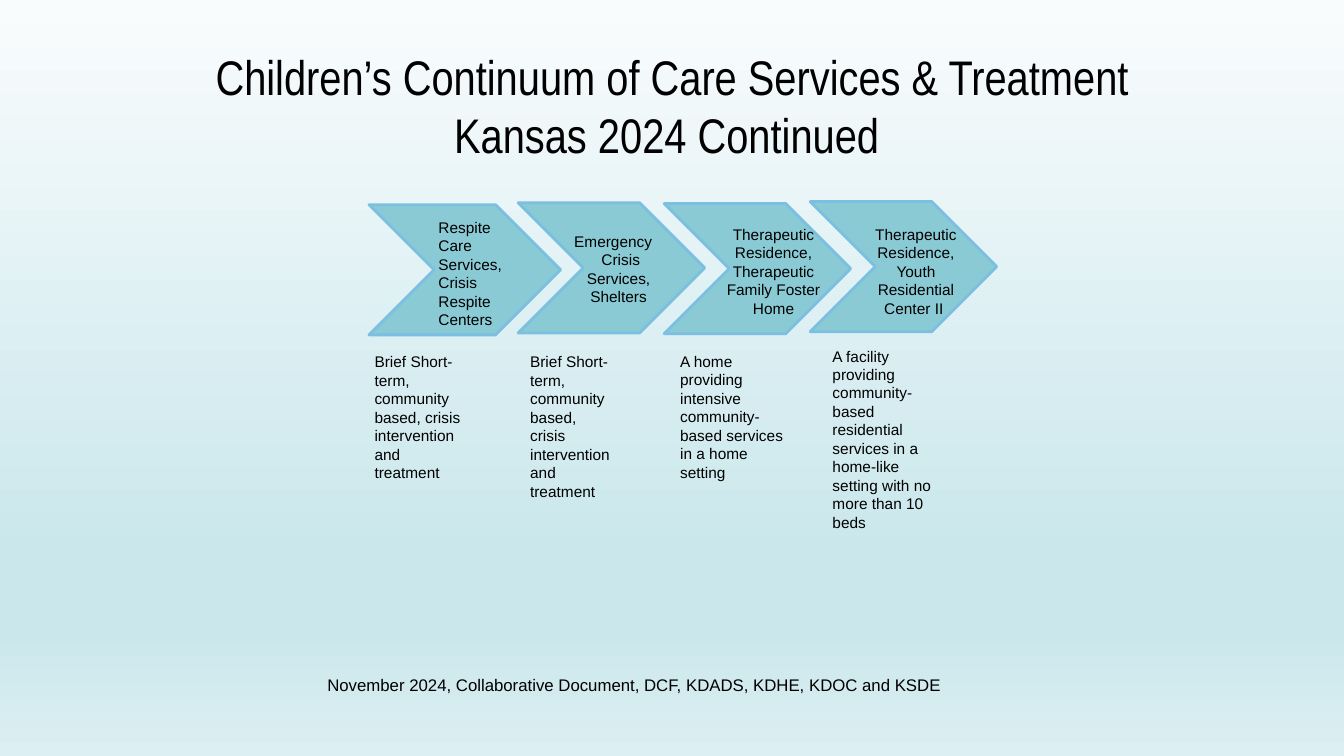
from lxml import etree
from pptx import Presentation
from pptx.dml.color import RGBColor
from pptx.enum.shapes import MSO_SHAPE
from pptx.enum.text import MSO_ANCHOR, MSO_AUTO_SIZE, PP_ALIGN
from pptx.oxml.ns import qn
from pptx.util import Cm, Pt

CHEVRON = MSO_SHAPE.CHEVRON
MIDDLE = MSO_ANCHOR.MIDDLE
NO_FIT, GROW = MSO_AUTO_SIZE.NONE, MSO_AUTO_SIZE.SHAPE_TO_FIT_TEXT
LEFT, CENTER = PP_ALIGN.LEFT, PP_ALIGN.CENTER
TITLE_ONLY = 5

BLACK, TEAL, SKY = "000000", "8ACAD4", "7BBFE1"
BACKGROUND = [(0, "F9FCFD"), (74, "CAE7EC"), (83, "CAE7EC"), (100, "DCEFF2")]

TITLE = "Children’s Continuum of Care Services & Treatment\nKansas 2024 Continued "
FOOTER = "November 2024, Collaborative Document, DCF, KDADS, KDHE, KDOC and KSDE"
CRISIS = "Brief Short-term, community based, crisis intervention and treatment"

# Per service: chevron box, label box, label paragraphs, description box, description
SERVICES = [
    ((9.3, 5.16, 4.83, 3.28), (10.8, 5.36, 2.74, 3.07),
     [("Respite Care Services, Crisis Respite Centers", LEFT)],
     (9.19, 8.76, 2.74, 3.56), CRISIS),
    ((13.06, 5.11, 4.7, 3.28), (14.22, 5.72, 2.74, 2.13),
     [("Emergency", LEFT), (" Crisis Services, Shelters", CENTER)],
     (13.11, 8.76, 2.57, 4.01), CRISIS),
    ((16.74, 5.13, 4.7, 3.28), (17.88, 5.54, 3.23, 2.62),
     [("Therapeutic Residence, Therapeutic Family Foster Home", CENTER)],
     (16.89, 8.74, 3.15, 3.56),
     "A home providing intensive community-based services in a home setting"),
    ((20.42, 5.08, 4.7, 3.28), (21.41, 5.54, 3.35, 2.62),
     [("Therapeutic Residence, Youth Residential Center II ", CENTER)],
     (20.73, 8.61, 3.35, 4.95),
     "A facility providing community-based residential services in a "
     "home-like setting with no more than 10 beds"),
]


def rgb(value):
    return RGBColor.from_string(value)


def box_cm(box):
    return [Cm(length) for length in box]


def format_paragraph(p, text, align, size, font="Arial"):
    p.text = text
    p.alignment = align
    for r in p.runs:
        r.font.name = font
        r.font.size = Pt(size)
        r.font.color.rgb = rgb(BLACK)


def set_background(s, stops):
    fill = s.background.fill
    fill.gradient()
    fill.gradient_angle = 270
    gs_list = next(s.element.iter(qn("a:gsLst")))
    for gs in list(gs_list):
        gs_list.remove(gs)
    for percent, color in stops:
        gs = etree.SubElement(gs_list, qn("a:gs"), pos=str(percent * 1000))
        etree.SubElement(gs, qn("a:srgbClr"), val=color)


def set_title(s, text, box):
    title = s.shapes.title
    title.left, title.top, title.width, title.height = box_cm(box)
    tf = title.text_frame
    tf.auto_size = NO_FIT
    tf.word_wrap = True
    tf.vertical_anchor = MIDDLE
    tf.margin_left = tf.margin_right = tf.margin_top = tf.margin_bottom = Cm(0.25)
    format_paragraph(tf.paragraphs[0], text, CENTER, 34.7, "Arial Narrow")


def add_chevron(s, box):
    sp = s.shapes.add_shape(CHEVRON, *box_cm(box))
    sp.shadow.inherit = False
    sp.fill.solid()
    sp.fill.fore_color.rgb = rgb(TEAL)
    sp.line.color.rgb = rgb(SKY)
    sp.line.width = Pt(2)


def add_text(s, box, paragraphs, size=11):
    tf = s.shapes.add_textbox(*box_cm(box)).text_frame
    tf.word_wrap = True
    tf.auto_size = GROW
    for i, (text, align) in enumerate(paragraphs):
        p = tf.add_paragraph() if i else tf.paragraphs[0]
        format_paragraph(p, text, align, size)


def main():
    prs = Presentation()
    prs.slide_width, prs.slide_height = Cm(33.87), Cm(19.05)
    s = prs.slides.add_slide(prs.slide_layouts[TITLE_ONLY])

    # Background and title
    set_background(s, BACKGROUND)
    set_title(s, TITLE, (1.7, 2.11, 30.48, 1.07))

    # Chevrons with their labels and descriptions
    for chevron, label_box, label, description_box, description in SERVICES:
        add_chevron(s, chevron)
        add_text(s, label_box, label)
        add_text(s, description_box, [(description, LEFT)])

    # Footer
    add_text(s, (8, 16.89, 16.92, 0.76), [(FOOTER, LEFT)], size=12)

    prs.save("out.pptx")


if __name__ == "__main__":
    main()
